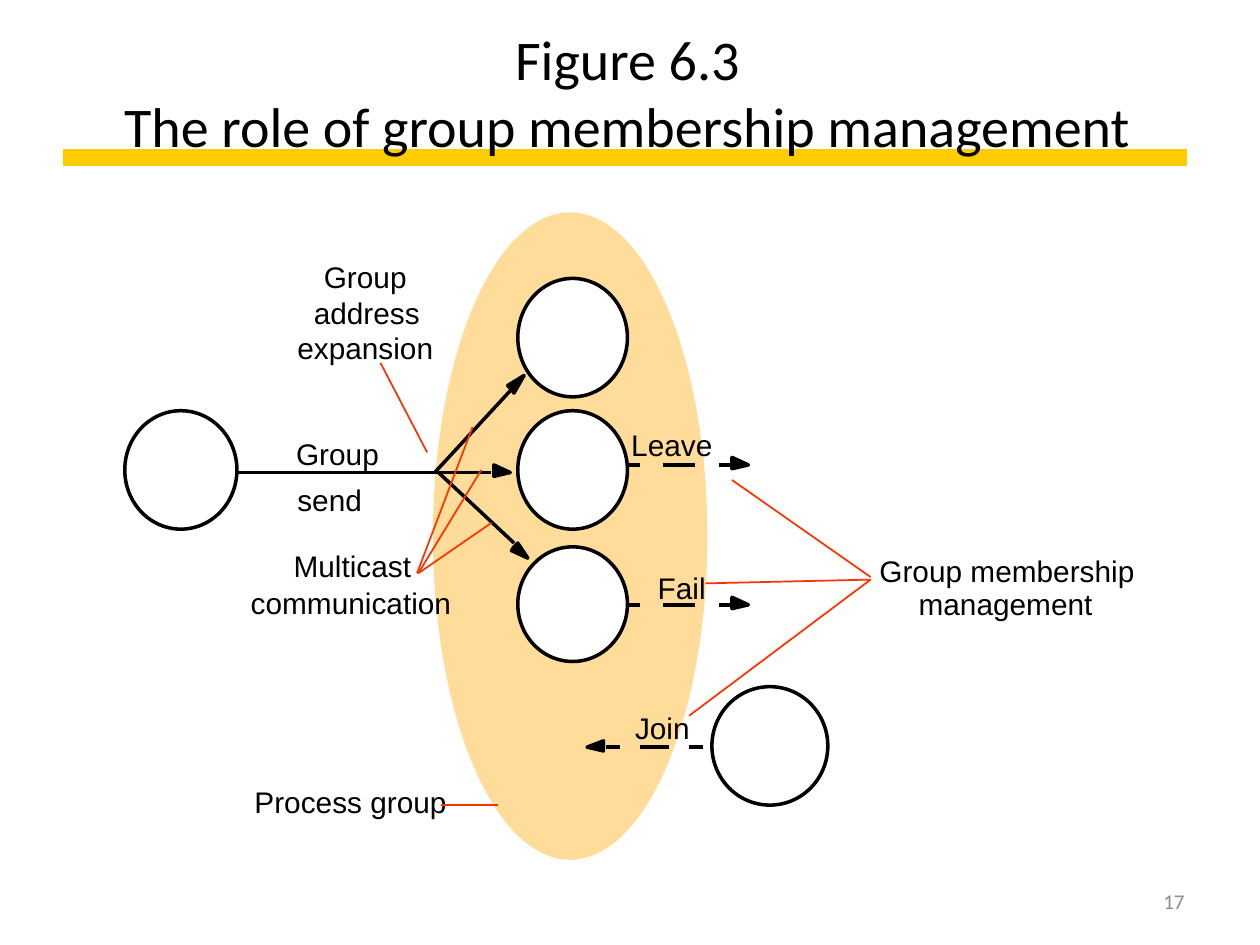
from lxml import etree
from pptx import Presentation
from pptx.dml.color import RGBColor
from pptx.enum.shapes import MSO_CONNECTOR, MSO_SHAPE
from pptx.enum.text import MSO_ANCHOR, MSO_AUTO_SIZE, PP_ALIGN
from pptx.oxml.ns import qn
from pptx.util import Inches, Pt

STRAIGHT = MSO_CONNECTOR.STRAIGHT
OVAL = MSO_SHAPE.OVAL
MIDDLE = MSO_ANCHOR.MIDDLE
NO_AUTOFIT, FIT_SHAPE = MSO_AUTO_SIZE.NONE, MSO_AUTO_SIZE.SHAPE_TO_FIT_TEXT
CENTER, RIGHT = PP_ALIGN.CENTER, PP_ALIGN.RIGHT

COLORS = {
    "ink": "000000",
    "bar": "FFCC00",
    "group": "FFDC99",
    "process": "FFFFFF",
    "callout": "FF3300",
    "number": "8C8C8C",
}
COLORS = {name: RGBColor.from_string(value) for name, value in COLORS.items()}

presentation = Presentation()
presentation.slide_width, presentation.slide_height = Inches(10), Inches(7.5)
slide = presentation.slides.add_slide(presentation.slide_layouts[5])
shapes = slide.shapes


def add_line(x1, y1, x2, y2, color, width):
    line = shapes.add_connector(STRAIGHT, Inches(x1), Inches(y1), Inches(x2), Inches(y2))
    line.line.color.rgb = COLORS[color]
    line.line.width = Pt(width)
    etree.SubElement(line._element.spPr, qn("a:effectLst"))
    return line


def style_shape(shape, fill, outline):
    shape.shadow.inherit = False
    shape.fill.solid()
    shape.fill.fore_color.rgb = COLORS[fill]
    shape.line.color.rgb = COLORS[outline]
    shape.line.width = Pt(2)


title = shapes.title
title.left, title.top, title.width, title.height = Inches(0.5), Inches(0.1), Inches(9), Inches(1.25)
title_frame = title.text_frame
title_frame.auto_size = NO_AUTOFIT
title_frame.vertical_anchor = MIDDLE
title_frame.margin_right = Inches(0.14)
paragraph = title_frame.paragraphs[0]
paragraph.add_run().text = "Figure 6.3"
paragraph.add_line_break()
paragraph.add_run().text = "The role of group membership management"
paragraph.alignment = CENTER
paragraph.font.name = "Calibri"
paragraph.font.size = Pt(32)
paragraph.font.color.rgb = COLORS["ink"]

title_bar = add_line(0.5, 1.25, 9.42, 1.25, "bar", 10)
title._element.addprevious(title_bar._element)

process_group = shapes.add_shape(OVAL, Inches(3.45), Inches(1.7), Inches(2.15), Inches(5.11))
style_shape(process_group, "group", "group")

send_lines = [
    (1.85, 3.75, 3.9, 3.75),
    (3.45, 3.75, 4.06, 3.09),
    (3.48, 3.75, 4.08, 4.31),
]
leave_y, fail_y, join_y = 3.69, 4.8, 5.93
outward_dashes = [(4.97, 5.08), (5.26, 5.52), (5.71, 5.81)]
inward_dashes = [(5.58, 5.47), (5.31, 5.08), (4.92, 4.81)]
dashes = [(y, outward_dashes) for y in (leave_y, fail_y)] + [(join_y, inward_dashes)]
dash_lines = [(x1, y, x2, y) for y, spans in dashes for x1, x2 in spans]
for ends in send_lines + dash_lines:
    add_line(*ends, "ink", 2)

processes = [
    (0.99, 3.26, 0.89, 0.94),
    (4.11, 2.21, 0.87, 0.94),
    (4.11, 3.26, 0.87, 0.94),
    (4.11, 4.34, 0.87, 0.91),
    (5.65, 5.45, 0.92, 0.94),
]
for box in processes:
    process = shapes.add_shape(OVAL, *[Inches(value) for value in box])
    style_shape(process, "process", "ink")

arrowheads = [
    [(4.06, 3.09), (4.03, 3.06), (4.16, 2.98), (4.08, 3.12)],
    [(4.08, 4.34), (4.11, 4.31), (4.19, 4.43), (4.06, 4.37)],
    [(4.79, join_y), (4.79, 5.96), (4.66, join_y), (4.79, 5.88)],
]
for x, y in [(3.92, 3.75), (5.81, leave_y), (5.81, fail_y)]:
    arrowheads.append([(x, y), (x, y - 0.06), (x + 0.13, y), (x, y + 0.03)])
for points in arrowheads:
    start, *rest = [(Inches(x), Inches(y)) for x, y in points]
    builder = shapes.build_freeform(*start)
    builder.add_line_segments(rest, close=True)
    style_shape(builder.convert_to_shape(), "ink", "ink")

labels = [
    ("Group", 2.57, 2.05, 0.66),
    ("address", 2.49, 2.34, 0.85),
    ("expansion", 2.36, 2.62, 1.09),
    ("Group", 2.35, 3.46, 0.66),
    ("send", 2.36, 3.82, 0.52),
    ("Multicast", 2.33, 4.35, 0.94),
    ("communication", 1.99, 4.64, 1.6),
    ("Process group", 2.02, 6.22, 1.54),
    ("Leave", 5.01, 3.39, 0.65),
    ("Fail", 5.22, 4.52, 0.4),
    ("Join", 5.04, 5.63, 0.44),
    ("Group membership", 6.98, 4.39, 2.04),
    ("management", 7.29, 4.65, 1.39),
]
for text, left, top, width in labels:
    label = shapes.add_textbox(Inches(left), Inches(top), Inches(width), Inches(0.29))
    frame = label.text_frame
    frame.word_wrap = False
    frame.auto_size = FIT_SHAPE
    frame.margin_left = frame.margin_right = frame.margin_top = frame.margin_bottom = 0
    paragraph = frame.paragraphs[0]
    paragraph.text = text
    paragraph.font.name = "Arial"
    paragraph.font.size = Pt(17)
    paragraph.font.color.rgb = COLORS["ink"]

callouts = [
    (3.02, 2.88, 3.39, 3.59),
    (6.91, 4.58, 5.81, 3.81),
    (6.91, 4.6, 5.6, 4.63),
    (6.91, 4.6, 5.47, 5.68),
    (3.32, 4.55, 3.9, 4.15),
    (3.32, 4.55, 3.82, 3.73),
    (3.31, 4.55, 3.75, 3.39),
    (3.5, 6.39, 3.95, 6.39),
]
for ends in callouts:
    add_line(*ends, "callout", 1)

slide_number = shapes.add_textbox(Inches(7.17), Inches(6.95), Inches(2.33), Inches(0.4))
slide_number.text_frame.word_wrap = True
slide_number.text_frame.vertical_anchor = MIDDLE
paragraph = slide_number.text_frame.paragraphs[0]
paragraph.text = "17"
paragraph.alignment = RIGHT
paragraph.font.name = "Calibri"
paragraph.font.size = Pt(12)
paragraph.font.color.rgb = COLORS["number"]

presentation.save("out.pptx")
